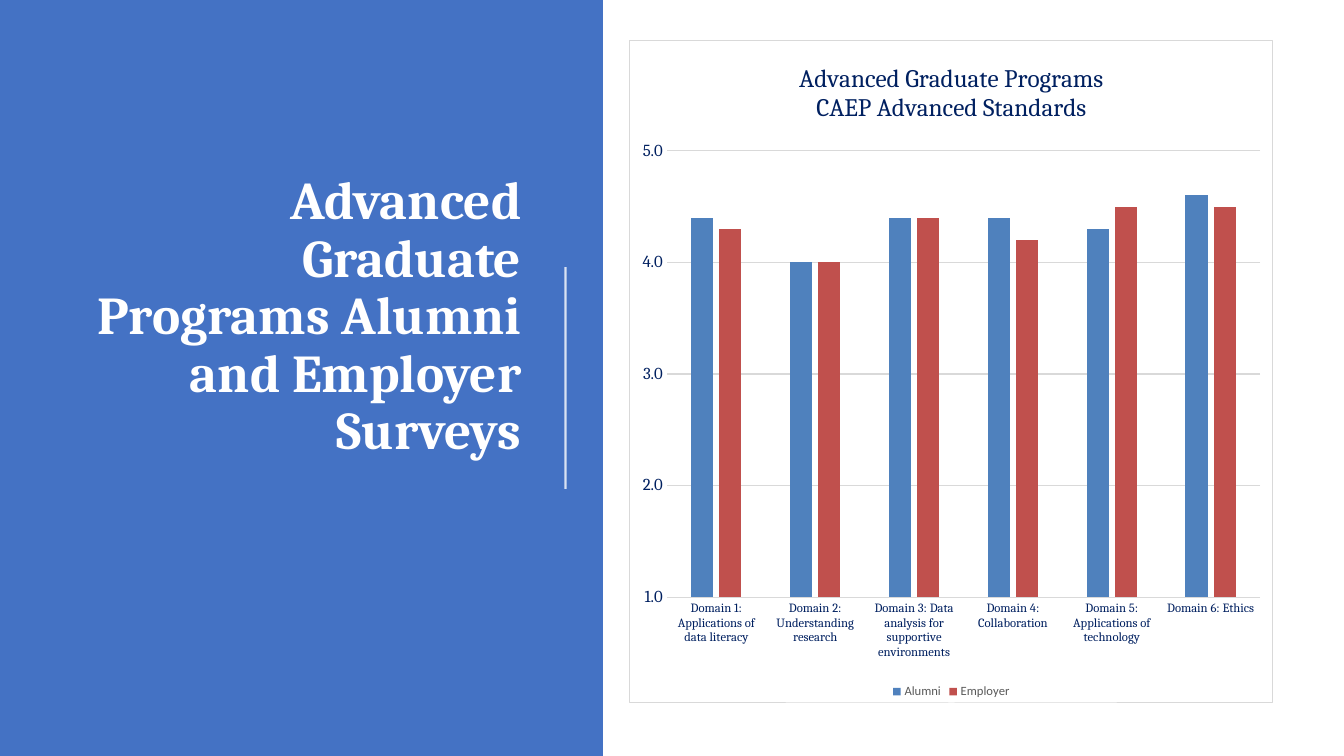
from lxml.etree import SubElement
from pptx import Presentation
from pptx.chart.data import CategoryChartData
from pptx.dml.color import RGBColor
from pptx.enum.chart import XL_CHART_TYPE, XL_LEGEND_POSITION, XL_TICK_MARK
from pptx.enum.shapes import MSO_CONNECTOR, MSO_SHAPE
from pptx.enum.text import MSO_ANCHOR, MSO_AUTO_SIZE, PP_ALIGN
from pptx.oxml import parse_xml
from pptx.oxml.ns import nsdecls, qn
from pptx.util import Inches, Pt

WIDTH, HEIGHT = Inches(13.33), Inches(7.5)
WHITE, BLUE, NAVY, GRID, GREY = "FFFFFF", "4472C4", "002060", "D9D9D9", "595959"

DOMAINS = [
    "Domain 1: Applications of data literacy",
    "Domain 2: Understanding research",
    "Domain 3: Data analysis for supportive environments",
    "Domain 4: Collaboration",
    "Domain 5: Applications of technology",
    "Domain 6: Ethics",
]
SURVEYS = {
    "Alumni": ("4F81BD", (4.4, 4.0, 4.4, 4.4, 4.3, 4.6)),
    "Employer": ("C0504D", (4.3, 4.0, 4.4, 4.2, 4.5, 4.5)),
}


def share(*percents):
    """Turn alternating x, y percentages of the slide into lengths."""
    return [int(side * pct / 100) for side, pct in zip((WIDTH, HEIGHT) * 2, percents)]


def set_attrs(obj, **values):
    for name, value in values.items():
        setattr(obj, name, value)


def set_font(font, size, color, name="Cambria", bold=False):
    set_attrs(font, size=Pt(size), name=name, bold=bold)
    font.color.rgb = RGBColor.from_string(color)


def set_fill(fill, color):
    fill.solid()
    fill.fore_color.rgb = RGBColor.from_string(color)


def set_line(line, color, width):
    set_fill(line.fill, color)
    line.width = Pt(width)


def add_panel(s, color, *box):
    sp = s.shapes.add_shape(MSO_SHAPE.RECTANGLE, *share(*box))
    sp.shadow.inherit = False
    set_fill(sp.fill, color)
    sp.line.fill.background()


def place_title(s, text, *box):
    title = s.shapes.title
    left, top, width, height = share(*box)
    set_attrs(title, left=left, top=top, width=width, height=height)
    tf = title.text_frame
    set_attrs(tf, text=text, word_wrap=True, auto_size=MSO_AUTO_SIZE.NONE,
              vertical_anchor=MSO_ANCHOR.MIDDLE, margin_bottom=Inches(1.25))
    p = tf.paragraphs[0]
    set_attrs(p, alignment=PP_ALIGN.RIGHT, line_spacing=0.9)
    set_font(p.runs[0].font, 38, WHITE, bold=True)


def add_divider(s, color, opacity, *ends):
    line = s.shapes.add_connector(MSO_CONNECTOR.STRAIGHT, *share(*ends))
    set_line(line.line, color, 1.5)
    sp_pr = line._element.spPr
    SubElement(sp_pr.find(".//" + qn("a:srgbClr")), qn("a:alpha"), val=str(opacity * 1000))
    SubElement(sp_pr, qn("a:effectLst"))


def frame_chart(chart, fill, border):
    """Give the chart area a fill and a thin border."""
    chart.font._element.getroottree().getroot().find(qn("c:txPr")).addprevious(parse_xml(
        f'<c:spPr {nsdecls("c", "a")}>'
        f'<a:solidFill><a:srgbClr val="{fill}"/></a:solidFill>'
        f'<a:ln w="{Pt(0.75)}"><a:solidFill><a:srgbClr val="{border}"/></a:solidFill></a:ln>'
        '</c:spPr>'))


def style_axes(chart):
    for axis, size in ((chart.category_axis, 9), (chart.value_axis, 12)):
        set_attrs(axis, major_tick_mark=XL_TICK_MARK.NONE, minor_tick_mark=XL_TICK_MARK.NONE)
        set_font(axis.tick_labels.font, size, NAVY)
    set_line(chart.category_axis.format.line, GRID, 0.75)
    scale = chart.value_axis
    set_attrs(scale, minimum_scale=1, maximum_scale=5, major_unit=1, has_major_gridlines=True)
    set_attrs(scale.tick_labels, number_format="0.0", number_format_is_linked=False)
    set_line(scale.major_gridlines.format.line, GRID, 0.75)
    scale.format.line.fill.background()


def add_survey_chart(s, title, *box):
    data = CategoryChartData(number_format="0.0")
    data.categories = DOMAINS
    for name, (_, scores) in SURVEYS.items():
        data.add_series(name, scores)
    chart = s.shapes.add_chart(XL_CHART_TYPE.COLUMN_CLUSTERED, *share(*box), data).chart
    set_font(chart.font, 10, "000000", "Calibri")
    frame_chart(chart, WHITE, GRID)

    tf = chart.chart_title.text_frame
    tf.text = title
    for p in tf.paragraphs:
        set_font(p.runs[0].font, 18, NAVY)
    chart.chart_title.include_in_layout = False

    chart.has_legend = True
    set_attrs(chart.legend, position=XL_LEGEND_POSITION.BOTTOM, include_in_layout=False)
    set_font(chart.legend.font, 9, GREY, "Calibri")

    style_axes(chart)
    plot = chart.plots[0]
    set_attrs(plot, gap_width=219, overlap=-27, vary_by_categories=False)
    for series, (color, _) in zip(plot.series, SURVEYS.values()):
        set_fill(series.format.fill, color)


def main():
    prs = Presentation()
    set_attrs(prs, slide_width=WIDTH, slide_height=HEIGHT)
    s = prs.slides.add_slide(prs.slide_layouts[5])
    add_panel(s, BLUE, 0, 0, 44.86, 100)
    place_title(s, "Advanced Graduate Programs Alumni and Employer Surveys",
                5.33, 9.33, 34.21, 81.33)
    # Placeholders come first in the tree, so lift the title above the panel.
    s.shapes._spTree.append(s.shapes.title._element)
    add_divider(s, WHITE, 80, 42.08, 35.33, 42.08, 64.67)
    add_survey_chart(s, "Advanced Graduate Programs\nCAEP Advanced Standards",
                     46.81, 5.33, 47.94, 87.73)
    prs.save("out.pptx")


if __name__ == "__main__":
    main()
